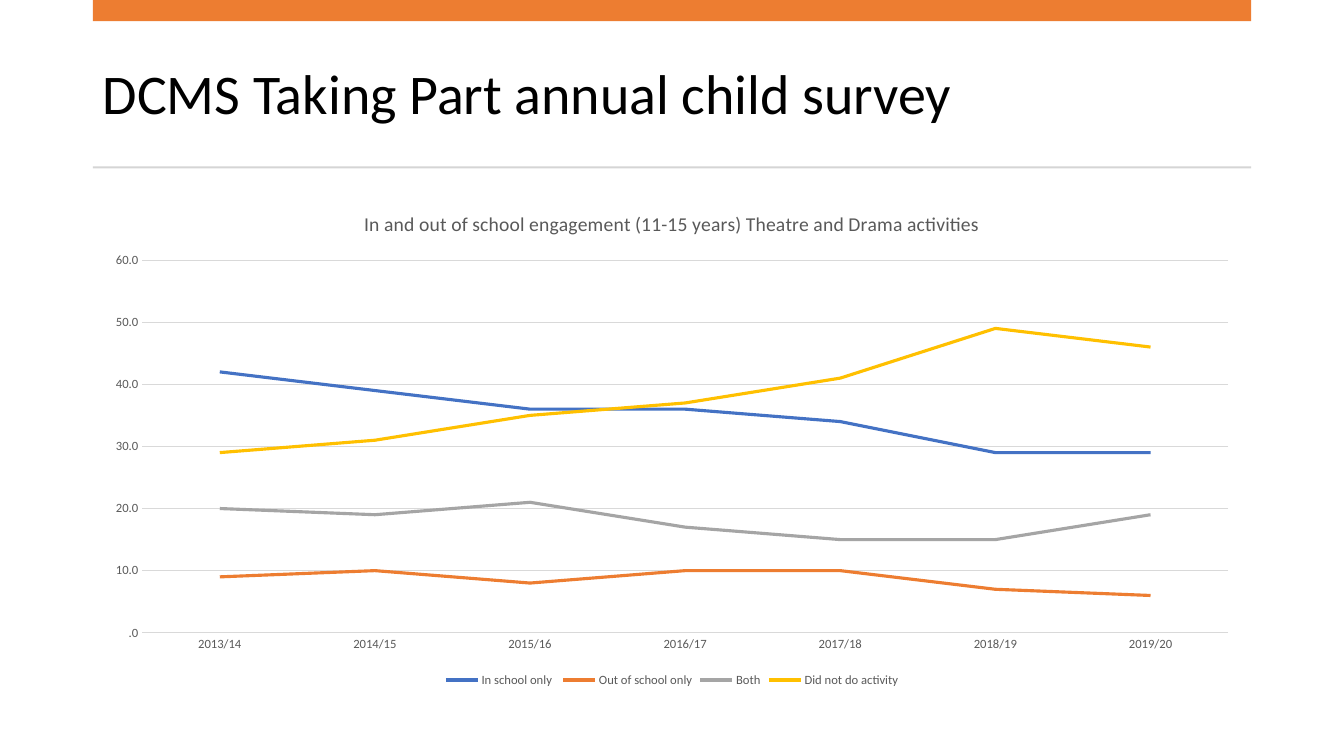
from dataclasses import dataclass

from pptx import Presentation
from pptx.chart.data import CategoryChartData
from pptx.dml.color import RGBColor
from pptx.enum.chart import XL_CHART_TYPE, XL_LEGEND_POSITION, XL_TICK_MARK
from pptx.enum.shapes import MSO_SHAPE
from pptx.enum.text import MSO_ANCHOR
from pptx.util import Inches, Pt

LINE_CHART = XL_CHART_TYPE.LINE
LEGEND_BOTTOM = XL_LEGEND_POSITION.BOTTOM
NO_TICK = XL_TICK_MARK.NONE
RECTANGLE = MSO_SHAPE.RECTANGLE
MIDDLE = MSO_ANCHOR.MIDDLE


@dataclass(frozen=True)
class Theme:
    """Fonts, type sizes and colours of the slide."""
    font: str = "Calibri"
    title_size: int = 40
    chart_size: int = 10
    chart_title_size: int = 14
    label_size: int = 9
    series_width: float = 2.25
    grid_width: float = 0.75
    black: str = "000000"
    accent: str = "ED7D31"
    rule: str = "D5D5D5"
    label: str = "595959"
    grid: str = "D9D9D9"


THEME = Theme()
LEFT, WIDTH = 0.92, 11.49
YEARS = ["2013/14", "2014/15", "2015/16", "2016/17", "2017/18", "2018/19", "2019/20"]
ENGAGEMENT = [
    ("In school only ", "4472C4", [42, 39, 36, 36, 34, 29, 29]),
    ("Out of school only", "ED7D31", [9, 10, 8, 10, 10, 7, 6]),
    ("Both", "A5A5A5", [20, 19, 21, 17, 15, 15, 19]),
    ("Did not do activity", "FFC000", [29, 31, 35, 37, 41, 49, 46]),
]


def set_font(font, size, color):
    """Apply the theme typeface with a size and colour."""
    font.name = THEME.font
    font.size = Pt(size)
    font.bold = False
    font.color.rgb = RGBColor.from_string(color)


def set_line(line, color, width):
    """Give a line a colour and a width in points."""
    line.color.rgb = RGBColor.from_string(color)
    line.width = Pt(width)


def add_bar(page, top, height, color):
    """Add a plain filled bar across the content width."""
    bar = page.shapes.add_shape(
        RECTANGLE, Inches(LEFT), Inches(top), Inches(WIDTH), Inches(height))
    bar.shadow.inherit = False
    bar.fill.solid()
    bar.fill.fore_color.rgb = RGBColor.from_string(color)
    bar.line.fill.background()


def add_title(page, text):
    """Add the slide heading."""
    box = page.shapes.add_textbox(
        Inches(LEFT), Inches(0.37), Inches(WIDTH), Inches(1.18))
    frame = box.text_frame
    frame.word_wrap = True
    frame.vertical_anchor = MIDDLE
    para = frame.paragraphs[0]
    para.text = text
    para.line_spacing = 0.9
    set_font(para.font, THEME.title_size, THEME.black)


def style_axes(chart):
    """Style the year axis and the percentage axis with its gridlines."""
    for axis in (chart.category_axis, chart.value_axis):
        axis.major_tick_mark = NO_TICK
        axis.minor_tick_mark = NO_TICK
        set_font(axis.tick_labels.font, THEME.label_size, THEME.label)
    set_line(chart.category_axis.format.line, THEME.grid, THEME.grid_width)
    values = chart.value_axis
    values.minimum_scale, values.maximum_scale, values.major_unit = 0, 60, 10
    values.tick_labels.number_format = "#.0"
    values.tick_labels.number_format_is_linked = False
    values.format.line.fill.background()
    set_line(values.major_gridlines.format.line, THEME.grid, THEME.grid_width)


def add_engagement_chart(page, title):
    """Add the line chart of engagement by school year."""
    data = CategoryChartData(number_format="0.0")
    data.categories = YEARS
    for name, _, shares in ENGAGEMENT:
        data.add_series(name, shares)
    chart = page.shapes.add_chart(
        LINE_CHART, Inches(LEFT), Inches(1.9), Inches(WIDTH), Inches(4.96), data).chart
    set_font(chart.font, THEME.chart_size, THEME.black)
    chart.has_title = True
    para = chart.chart_title.text_frame.paragraphs[0]
    para.text = title
    set_font(para.font, THEME.chart_title_size, THEME.label)
    chart.has_legend = True
    chart.legend.position = LEGEND_BOTTOM
    chart.legend.include_in_layout = False
    set_font(chart.legend.font, THEME.label_size, THEME.label)
    style_axes(chart)
    plot = chart.plots[0]
    plot.vary_by_categories = False
    for series, (_, color, _) in zip(plot.series, ENGAGEMENT):
        series.smooth = False
        set_line(series.format.line, color, THEME.series_width)


def main():
    """Build and save the slide."""
    deck = Presentation()
    deck.slide_width, deck.slide_height = Inches(13.33), Inches(7.5)
    page = deck.slides.add_slide(deck.slide_layouts[6])
    add_title(page, "DCMS Taking Part annual child survey")
    add_bar(page, 0, 0.21, THEME.accent)
    add_bar(page, 1.65, 0.02, THEME.rule)
    add_engagement_chart(
        page, "In and out of school engagement (11-15 years) Theatre and Drama activities")
    deck.save("out.pptx")


if __name__ == "__main__":
    main()
